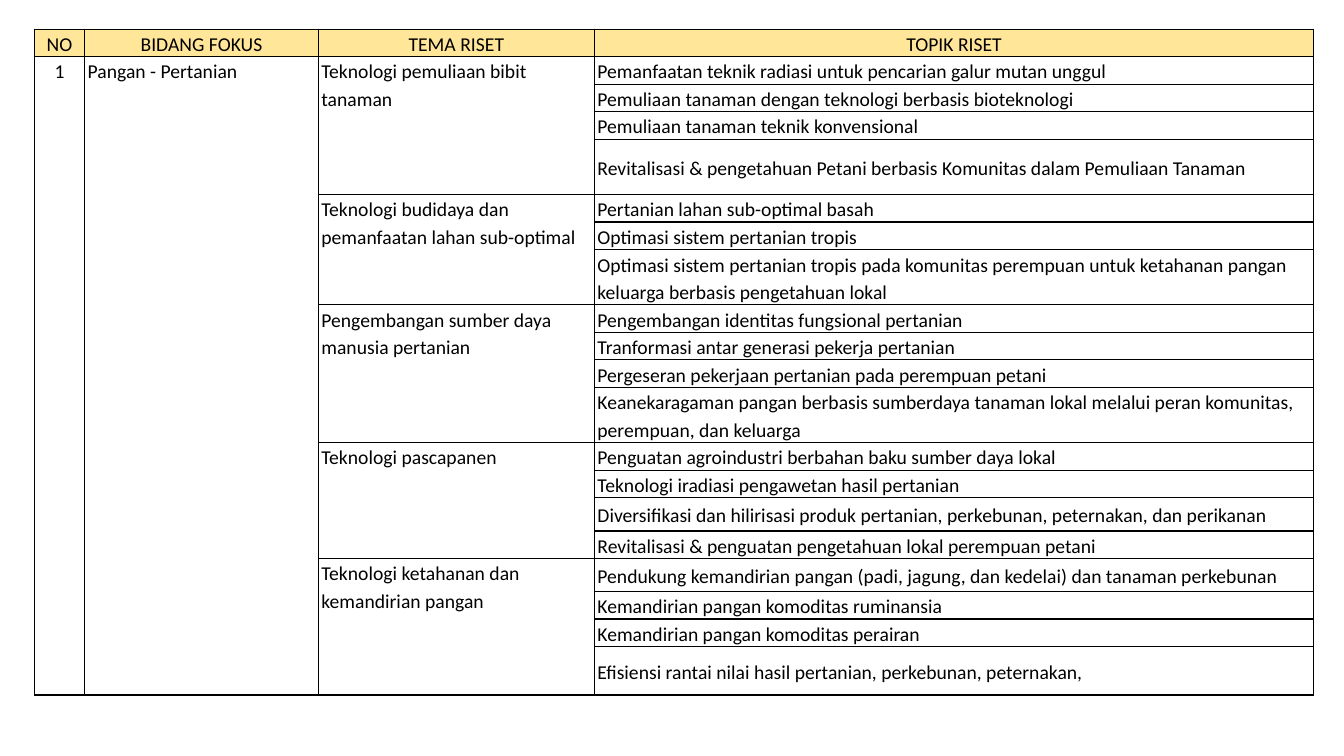
from dataclasses import dataclass

from lxml.etree import SubElement
from pptx import Presentation
from pptx.dml.color import RGBColor
from pptx.enum.text import MSO_ANCHOR as Anchor, PP_ALIGN as Align
from pptx.oxml.ns import qn
from pptx.util import Inches, Pt


@dataclass(frozen=True)
class Theme:
    font: str = "Calibri"
    size: int = 14
    line_spacing: float = 1.15
    ink: str = "000000"
    header_fill: str = "FFE699"
    body_fill: str = "FFFFFF"
    border: str = "000000"
    border_width: int = 1


THEME = Theme()

# Row heights in inches
LINE, MEDIUM, TALL, DOUBLE = 0.27, 0.33, 0.48, 0.55

COLUMN_WIDTHS = (0.5, 2.32, 2.74, 7.14)
HEADERS = ("NO", "BIDANG FOKUS", "TEMA RISET", "TOPIK RISET")
FOCUS = ("1", "Pangan - Pertanian")

# Each theme holds its topics with their row heights
RESEARCH = (
    ("Teknologi pemuliaan bibit tanaman", (
        ("Pemanfaatan teknik radiasi untuk pencarian galur mutan unggul", LINE),
        ("Pemuliaan tanaman dengan teknologi berbasis bioteknologi", LINE),
        ("Pemuliaan tanaman teknik konvensional", LINE),
        ("Revitalisasi & pengetahuan Petani berbasis Komunitas dalam Pemuliaan Tanaman", DOUBLE),
    )),
    ("Teknologi budidaya dan pemanfaatan lahan sub-optimal", (
        ("Pertanian lahan sub-optimal basah", LINE),
        ("Optimasi sistem pertanian tropis", LINE),
        ("Optimasi sistem pertanian tropis pada komunitas perempuan untuk ketahanan pangan "
         "keluarga berbasis pengetahuan lokal", DOUBLE),
    )),
    ("Pengembangan sumber daya manusia pertanian", (
        ("Pengembangan identitas fungsional pertanian", LINE),
        ("Tranformasi antar generasi pekerja pertanian", LINE),
        ("Pergeseran pekerjaan pertanian pada perempuan petani", LINE),
        ("Keanekaragaman pangan berbasis sumberdaya tanaman lokal melalui peran komunitas, "
         "perempuan, dan keluarga", DOUBLE),
    )),
    ("Teknologi pascapanen", (
        ("Penguatan agroindustri berbahan baku sumber daya lokal", LINE),
        ("Teknologi iradiasi pengawetan hasil pertanian", LINE),
        ("Diversifikasi dan hilirisasi produk pertanian, perkebunan, peternakan, dan perikanan", MEDIUM),
        ("Revitalisasi & penguatan pengetahuan lokal perempuan petani", LINE),
    )),
    ("Teknologi ketahanan dan kemandirian pangan", (
        ("Pendukung kemandirian pangan (padi, jagung, dan kedelai) dan tanaman perkebunan", MEDIUM),
        ("Kemandirian pangan komoditas ruminansia", LINE),
        ("Kemandirian pangan komoditas perairan", LINE),
        ("Efisiensi rantai nilai hasil pertanian, perkebunan, peternakan,", TALL),
    )),
)


def style_cell(cell, fill):
    """Give a cell its margins, borders and fill."""
    cell.margin_left = cell.margin_right = Inches(0.03)
    cell.margin_top = cell.margin_bottom = 0
    properties = cell._tc.get_or_add_tcPr()
    for side in ("a:lnL", "a:lnR", "a:lnT", "a:lnB"):
        line = SubElement(properties, qn(side), w=str(Pt(THEME.border_width)))
        solid = SubElement(line, qn("a:solidFill"))
        SubElement(solid, qn("a:srgbClr"), val=THEME.border)
    cell.fill.solid()
    cell.fill.fore_color.rgb = RGBColor.from_string(fill)


def write_cell(cell, text, align=Align.LEFT, anchor=Anchor.TOP):
    cell.text_frame.text = text
    cell.vertical_anchor = anchor
    para = cell.text_frame.paragraphs[0]
    para.alignment = align
    para.line_spacing = THEME.line_spacing
    font = para.runs[0].font
    font.name = THEME.font
    font.size = Pt(THEME.size)
    font.bold = False
    font.color.rgb = RGBColor.from_string(THEME.ink)


def add_research_table(page, left, top, width):
    topics = [topic for _, group in RESEARCH for topic in group]
    heights = [LINE] + [height for _, height in topics]
    frame = page.shapes.add_table(len(heights), len(HEADERS), Inches(left), Inches(top),
                                  Inches(width), Inches(sum(heights)))
    table = frame.table

    # Grid
    for column, share in zip(table.columns, COLUMN_WIDTHS):
        column.width = Inches(width * share / sum(COLUMN_WIDTHS))
    for index, (row, height) in enumerate(zip(table.rows, heights)):
        row.height = Inches(height)
        for cell in row.cells:
            style_cell(cell, THEME.body_fill if index else THEME.header_fill)

    # Header row
    for column, header in enumerate(HEADERS):
        write_cell(table.cell(0, column), header, Align.CENTER, Anchor.MIDDLE)

    # Focus area, spanning every topic
    for column, (text, align) in enumerate(zip(FOCUS, (Align.CENTER, Align.LEFT))):
        table.cell(1, column).merge(table.cell(len(topics), column))
        write_cell(table.cell(1, column), text, align)

    # Themes, each spanning its own topics
    first = 1
    for theme, group in RESEARCH:
        table.cell(first, 2).merge(table.cell(first + len(group) - 1, 2))
        write_cell(table.cell(first, 2), theme)
        for row, (topic, _) in enumerate(group, first):
            write_cell(table.cell(row, 3), topic, anchor=Anchor.MIDDLE)
        first += len(group)


def main():
    deck = Presentation()
    deck.slide_width, deck.slide_height = Inches(13.33), Inches(7.5)
    page = deck.slides.add_slide(deck.slide_layouts[6])
    add_research_table(page, left=0.34, top=0.29, width=12.69)
    deck.save("out.pptx")


if __name__ == "__main__":
    main()
